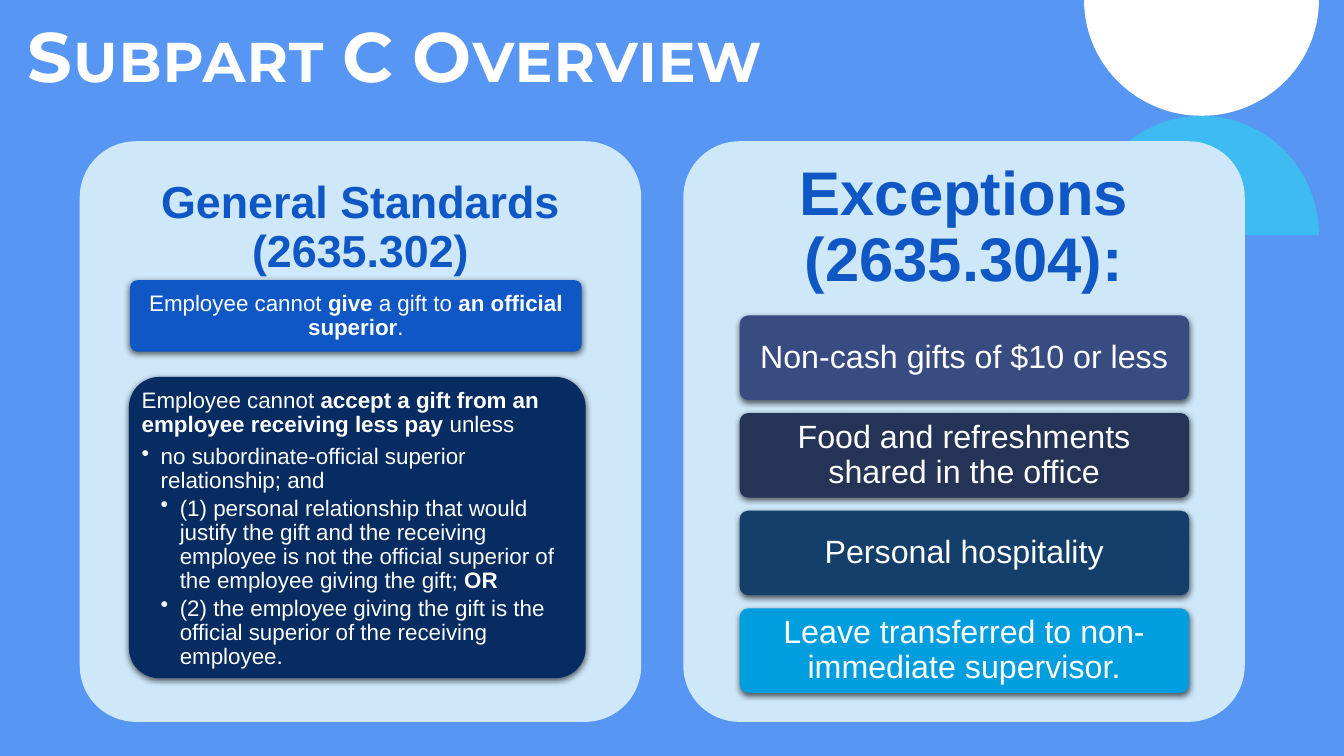
from math import cos, pi, sin

from lxml import etree
from pptx import Presentation
from pptx.dml.color import RGBColor
from pptx.enum.shapes import MSO_SHAPE as Preset
from pptx.enum.text import MSO_ANCHOR as Anchor, MSO_AUTO_SIZE as AutoSize, PP_ALIGN as Align
from pptx.oxml import parse_xml
from pptx.oxml.ns import nsdecls, qn
from pptx.util import Cm, Pt

WHITE = RGBColor(0xFF, 0xFF, 0xFF)
BACKGROUND = RGBColor(0x57, 0x96, 0xF3)
CYAN = RGBColor(0x3E, 0xBB, 0xF0)
PALE = RGBColor(0xCE, 0xE7, 0xF9)
BLUE = RGBColor(0x0E, 0x57, 0xC4)
NAVY = RGBColor(0x07, 0x2C, 0x62)

TITLE = "Subpart C Overview"
# heading, size in points, inset in cm
CARDS = [
    ("General Standards (2635.302)", 32, 0.33),
    ("Exceptions (2635.304):", 44, 0.46),
]
# Double asterisks enclose bold words
GIVING_RULE = "Employee cannot **give** a gift to **an official superior**."
# indent level, text
ACCEPTING_RULE = [
    (0, "Employee cannot **accept a gift from an employee receiving less pay** unless"),
    (1, "no subordinate-official superior relationship; and"),
    (2, "(1) personal relationship that would justify the gift and the receiving "
        "employee is not the official superior of the employee giving the gift; **OR**"),
    (2, "(2) the employee giving the gift is the official superior of the receiving employee."),
]
EXCEPTIONS = [
    ("Non-cash gifts of $10 or less", RGBColor(0x38, 0x4C, 0x81)),
    ("Food and refreshments shared in the office", RGBColor(0x25, 0x33, 0x56)),
    ("Personal hospitality", RGBColor(0x14, 0x3F, 0x6A)),
    ("Leave transferred to non-immediate supervisor.", RGBColor(0x00, 0x9E, 0xDE)),
]

CARD_LEFT, CARD_TOP, CARD_WIDTH, CARD_HEIGHT = 2.01, 3.56, 14.15, 14.63
CARD_PITCH = 15.21
HEADING_HEIGHT = 4.39
BAR_LEFT, BAR_TOP, BAR_WIDTH, BAR_HEIGHT = 18.64, 7.95, 11.33, 2.13
BAR_PITCH = 2.46
DISC_CENTER, DISC_RADIUS = 30.28, 2.96
INDENT = 0.48

SHADOW = (
    f'<a:outerShdw {nsdecls("a")} blurRad="57150" dist="19050" dir="5400000" '
    'algn="ctr" rotWithShape="0"><a:srgbClr val="000000"><a:alpha val="63000"/>'
    '</a:srgbClr></a:outerShdw>'
)


def paint(shape, color):
    shape.fill.solid()
    shape.fill.fore_color.rgb = color
    shape.line.fill.background()
    shape.shadow.inherit = False


def half_disc(page, flat_y, height, color):
    """Draw half an ellipse on a flat edge; a positive height bulges downwards."""
    steps = 60
    points = [
        (Cm(DISC_CENTER + DISC_RADIUS * cos(pi * step / steps)),
         Cm(flat_y + height * sin(pi * step / steps)))
        for step in range(steps + 1)
    ]
    builder = page.shapes.build_freeform(*points[0])
    builder.add_line_segments(points[1:], close=True)
    paint(builder.convert_to_shape(), color)


def rounded_box(page, left, top, width, height, color, shadow=True):
    box = page.shapes.add_shape(
        Preset.ROUNDED_RECTANGLE, Cm(left), Cm(top), Cm(width), Cm(height))
    box.adjustments[0] = 0.1
    paint(box, color)
    if shadow:
        effects = box._element.spPr.find(qn("a:effectLst"))
        effects.append(parse_xml(SHADOW))
    return box


def set_frame(frame, inset_x, inset_y, anchor):
    frame.word_wrap = True
    frame.auto_size = AutoSize.NONE
    frame.margin_left = frame.margin_right = Cm(inset_x)
    frame.margin_top = frame.margin_bottom = Cm(inset_y)
    frame.vertical_anchor = anchor


def write(para, text, size, color=WHITE, bold=False, align=Align.CENTER, face="Arial"):
    para.alignment = align
    para.line_spacing = 0.9
    for index, part in enumerate(text.split("**")):
        if part:
            span = para.add_run()
            span.text = part
            span.font.name = face
            span.font.size = Pt(size)
            span.font.bold = bold or index % 2 == 1
            span.font.color.rgb = color


def add_bullet(para, level):
    properties = para._p.get_or_add_pPr()
    properties.set("marL", str(Cm(INDENT * level)))
    properties.set("indent", str(-Cm(INDENT)))
    etree.SubElement(properties, qn("a:buChar"), char="•")


def add_title(page):
    title = page.shapes.title
    title.left, title.top, title.width, title.height = Cm(0.69), Cm(0.56), Cm(22.73), Cm(2.62)
    set_frame(title.text_frame, 0, 0, Anchor.TOP)
    para = title.text_frame.paragraphs[0]
    write(para, TITLE, 50, bold=True, align=Align.LEFT, face="Montserrat")
    properties = para.runs[0].font._element
    properties.set("cap", "small")
    properties.set("spc", "100")


def add_cards(page):
    for index, (heading, size, inset) in enumerate(CARDS):
        left = CARD_LEFT + index * CARD_PITCH
        rounded_box(page, left, CARD_TOP, CARD_WIDTH, CARD_HEIGHT, PALE, shadow=False)
        box = page.shapes.add_textbox(
            Cm(left), Cm(CARD_TOP), Cm(CARD_WIDTH), Cm(HEADING_HEIGHT))
        set_frame(box.text_frame, inset, inset, Anchor.MIDDLE)
        write(box.text_frame.paragraphs[0], heading, size, BLUE, bold=True)


def add_standards(page):
    giving = rounded_box(page, 3.28, 7.06, 11.38, 1.8, BLUE)
    set_frame(giving.text_frame, 0.1, 0.08, Anchor.MIDDLE)
    write(giving.text_frame.paragraphs[0], GIVING_RULE, 16)

    accepting = rounded_box(page, 3.25, 9.5, 11.51, 7.59, NAVY)
    frame = accepting.text_frame
    set_frame(frame, 0.1, 0.08, Anchor.TOP)
    for index, (level, text) in enumerate(ACCEPTING_RULE):
        para = frame.add_paragraph() if index else frame.paragraphs[0]
        para.level = level
        if level:
            add_bullet(para, level)
        para.space_after = Pt(2.4 if level else 5.6)
        write(para, text, 16, align=Align.LEFT)


def add_exceptions(page):
    for index, (text, color) in enumerate(EXCEPTIONS):
        top = BAR_TOP + index * BAR_PITCH
        bar = rounded_box(page, BAR_LEFT, top, BAR_WIDTH, BAR_HEIGHT, color)
        set_frame(bar.text_frame, 0.15, 0.13, Anchor.MIDDLE)
        write(bar.text_frame.paragraphs[0], text, 23)


def main():
    deck = Presentation()
    deck.slide_width, deck.slide_height = Cm(33.87), Cm(19.05)
    page = deck.slides.add_slide(deck.slide_layouts[5])
    page.background.fill.solid()
    page.background.fill.fore_color.rgb = BACKGROUND
    half_disc(page, 0, 2.92, WHITE)
    half_disc(page, 5.92, -3, CYAN)
    add_title(page)
    add_cards(page)
    add_standards(page)
    add_exceptions(page)
    deck.save("out.pptx")


if __name__ == "__main__":
    main()
